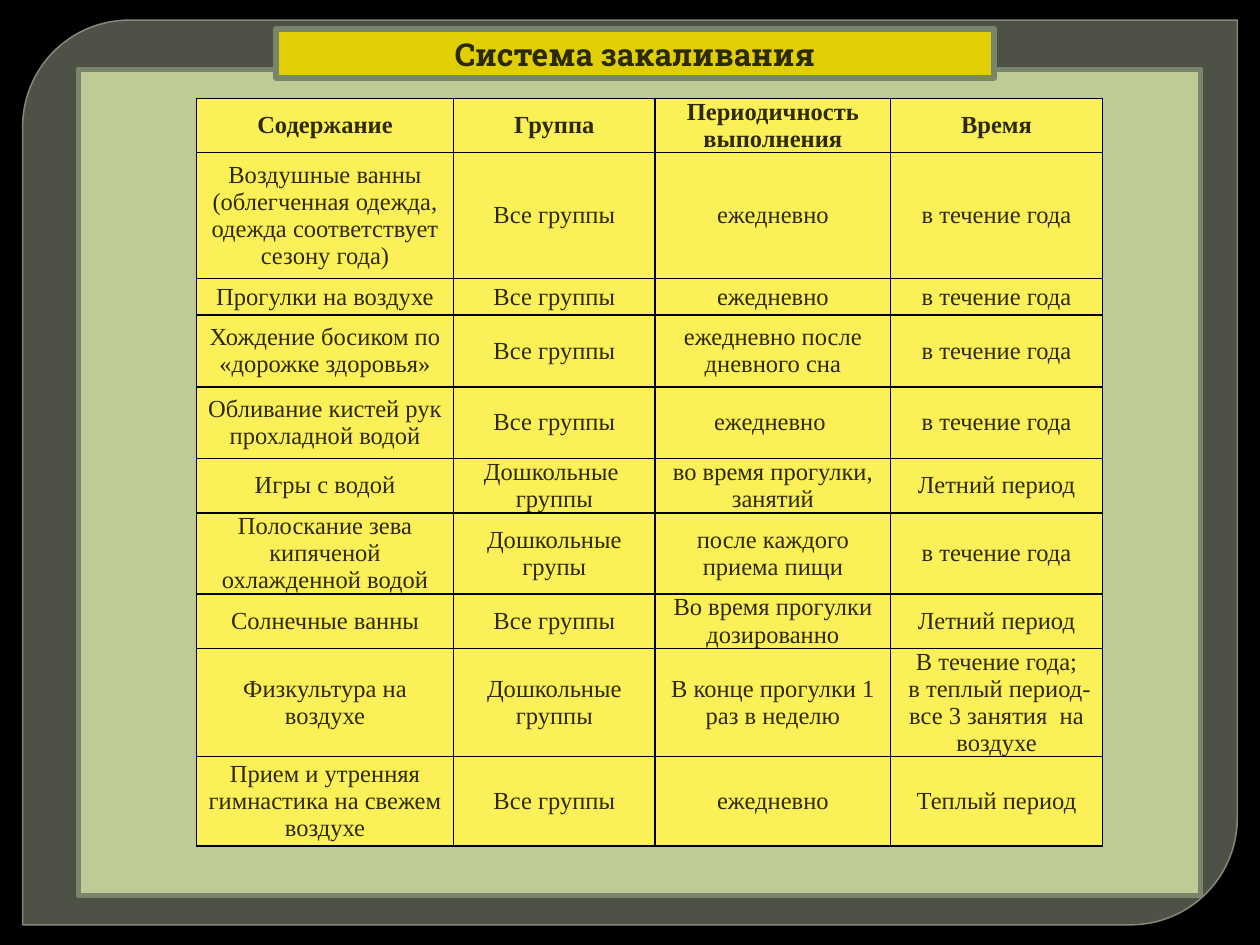
"""Build the slide with the hardening schedule table."""
from dataclasses import dataclass

from lxml import etree
from pptx import Presentation
from pptx.dml.color import RGBColor
from pptx.enum.shapes import MSO_SHAPE
from pptx.enum.text import MSO_ANCHOR, PP_ALIGN
from pptx.oxml.ns import qn
from pptx.util import Inches, Pt

RECTANGLE = MSO_SHAPE.RECTANGLE
ROUNDED_DIAGONAL = MSO_SHAPE.ROUND_2_DIAG_RECTANGLE
MIDDLE = MSO_ANCHOR.MIDDLE
CENTER = PP_ALIGN.CENTER

TITLE = "Система закаливания"
ALL_GROUPS = "Все группы"
DAILY = "ежедневно"
ALL_YEAR = "в течение года"
SUMMER = "Летний период"
ROWS = [
    ("Содержание", "Группа", "Периодичность выполнения", "Время"),
    ("Воздушные ванны (облегченная одежда, одежда соответствует сезону года)",
     ALL_GROUPS, DAILY, ALL_YEAR),
    ("Прогулки на воздухе", ALL_GROUPS, DAILY, ALL_YEAR),
    ("Хождение босиком по «дорожке здоровья»", ALL_GROUPS,
     "ежедневно после дневного сна", ALL_YEAR),
    ("Обливание кистей рук прохладной водой", ALL_GROUPS, "ежедневно ", ALL_YEAR),
    ("Игры с водой", "Дошкольные \nгруппы", "во время прогулки, занятий", SUMMER),
    ("Полоскание зева кипяченой охлажденной водой", "Дошкольные групы",
     "после каждого приема пищи", ALL_YEAR),
    ("Солнечные ванны", ALL_GROUPS, "Во время прогулки дозированно", SUMMER),
    ("Физкультура на воздухе", "Дошкольные группы", "В конце прогулки 1 раз в неделю",
     "В течение года;\n в теплый период- все 3 занятия  на воздухе"),
    ("Прием и утренняя гимнастика на свежем воздухе", ALL_GROUPS, DAILY,
     "Теплый период"),
]
COLUMN_WIDTHS = (2.04, 1.6, 1.87, 1.68)
ROW_HEIGHTS = (0.43, 1, 0.29, 0.57, 0.57, 0.43, 0.57, 0.43, 0.86, 0.71)
SLIDE_SIZE = (10, 7.5)
FRAME_BOX = (0.18, 0.16, 9.64, 7.18)
PANEL_BOX = (0.62, 0.55, 8.91, 6.56)
TITLE_BOX = (2.19, 0.23, 5.7, 0.39)
TABLE_ORIGIN = (1.56, 0.78)


@dataclass(frozen=True)
class Theme:
    background: str = "000000"
    frame: str = "787D6B"
    frame_line: str = "8F9483"
    panel: str = "BECB95"
    panel_line: str = "7A866C"
    title_fill: str = "DFCF04"
    cell_fill: str = "FCF059"
    cell_border: str = "000000"
    text: str = "2D2901"
    title_font: str = "Roboto Slab"
    table_font: str = "Times New Roman"
    title_size: int = 18
    table_size: int = 14


THEME = Theme()


def paint(fill, color, opacity=100):
    fill.solid()
    fill.fore_color.rgb = RGBColor.from_string(color)
    if opacity < 100:
        color_element = fill._xPr.find(f"{qn('a:solidFill')}/{qn('a:srgbClr')}")
        etree.SubElement(color_element, qn("a:alpha"), val=str(opacity * 1000))


def add_box(slide, kind, box, fill, line, line_width, opacity=100, line_opacity=100):
    shape = slide.shapes.add_shape(kind, *map(Inches, box))
    shape.shadow.inherit = False
    paint(shape.fill, fill, opacity)
    shape.line.width = Pt(line_width)
    paint(shape.line.fill, line, line_opacity)
    return shape


def write(text_frame, text, font_name, size, bold):
    text_frame.word_wrap = True
    for index, line in enumerate(text.split("\n")):
        paragraph = text_frame.add_paragraph() if index else text_frame.paragraphs[0]
        paragraph.alignment = CENTER
        run = paragraph.add_run()
        run.text = line
        run.font.name = font_name
        run.font.size = Pt(size)
        run.font.bold = bold
        run.font.color.rgb = RGBColor.from_string(THEME.text)


def add_borders(cell):
    properties = cell._tc.get_or_add_tcPr()
    for index, side in enumerate(("lnL", "lnR", "lnT", "lnB")):
        border = etree.Element(qn(f"a:{side}"), w=str(Pt(1)))
        solid = etree.SubElement(border, qn("a:solidFill"))
        etree.SubElement(solid, qn("a:srgbClr"), val=THEME.cell_border)
        properties.insert(index, border)


def add_schedule(slide):
    size = (sum(COLUMN_WIDTHS), sum(ROW_HEIGHTS))
    table = slide.shapes.add_table(
        len(ROWS), len(COLUMN_WIDTHS), *map(Inches, TABLE_ORIGIN + size)).table
    table.first_row = table.horz_banding = False
    for column, width in zip(table.columns, COLUMN_WIDTHS):
        column.width = Inches(width)
    for row_index, (row, height) in enumerate(zip(table.rows, ROW_HEIGHTS)):
        row.height = Inches(height)
        for cell, text in zip(row.cells, ROWS[row_index]):
            cell.margin_left = cell.margin_right = Inches(0.05)
            cell.margin_top = cell.margin_bottom = 0
            cell.vertical_anchor = MIDDLE
            paint(cell.fill, THEME.cell_fill)
            add_borders(cell)
            write(cell.text_frame, text, THEME.table_font, THEME.table_size,
                  row_index == 0)


def main():
    presentation = Presentation()
    presentation.slide_width, presentation.slide_height = map(Inches, SLIDE_SIZE)
    slide = presentation.slides.add_slide(presentation.slide_layouts[6])
    paint(slide.background.fill, THEME.background)
    frame = add_box(slide, ROUNDED_DIAGONAL, FRAME_BOX, THEME.frame, THEME.frame_line,
                    0.87, opacity=65, line_opacity=88)
    frame.adjustments[0] = 0.118
    frame.adjustments[1] = 0
    add_box(slide, RECTANGLE, PANEL_BOX, THEME.panel, THEME.panel_line, 3)
    add_schedule(slide)
    title = add_box(slide, RECTANGLE, TITLE_BOX, THEME.title_fill, THEME.panel_line, 3)
    title.text_frame.vertical_anchor = MIDDLE
    write(title.text_frame, TITLE, THEME.title_font, THEME.title_size, True)
    presentation.save("out.pptx")


if __name__ == "__main__":
    main()
